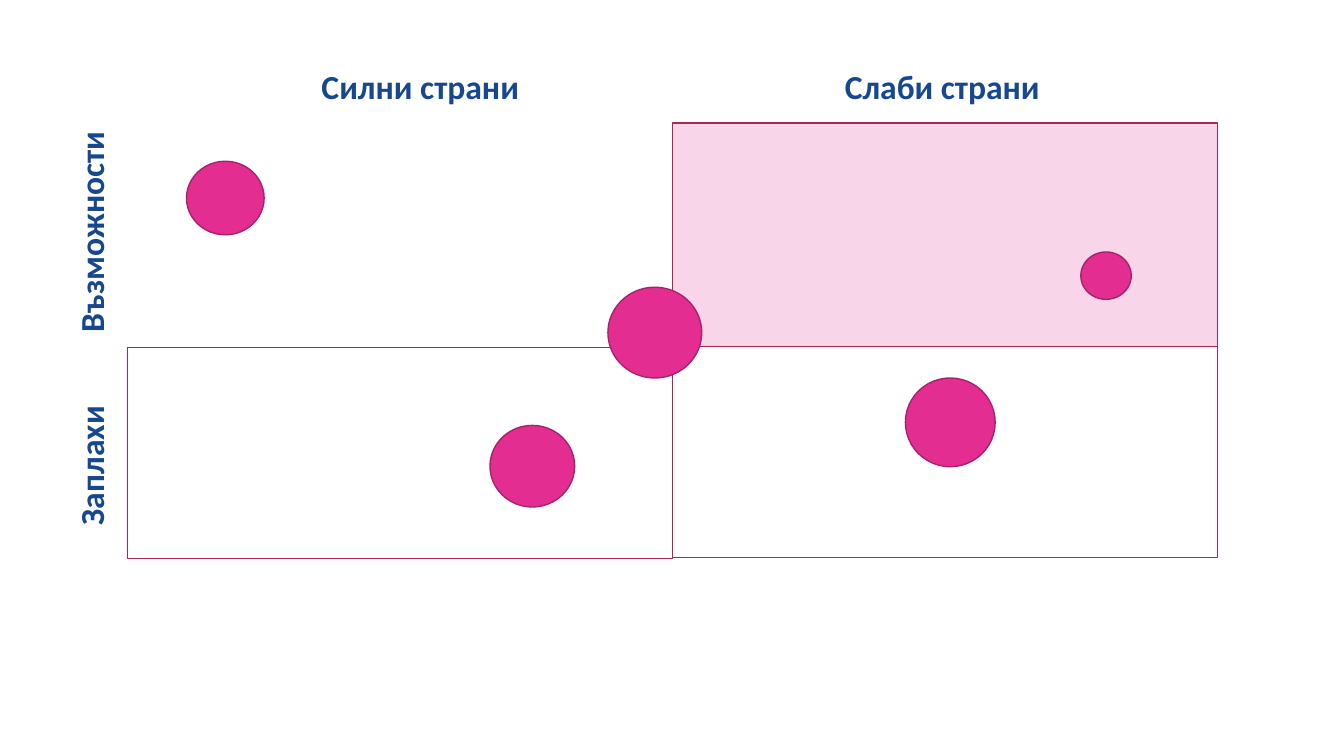
from pptx import Presentation
from pptx.dml.color import RGBColor
from pptx.enum.shapes import MSO_SHAPE
from pptx.enum.text import MSO_AUTO_SIZE, PP_ALIGN
from pptx.util import Emu, Pt

RECTANGLE = MSO_SHAPE.RECTANGLE
OVAL = MSO_SHAPE.OVAL
LEFT = PP_ALIGN.LEFT
CENTER = PP_ALIGN.CENTER
GROW = MSO_AUTO_SIZE.SHAPE_TO_FIT_TEXT

EMU_PER_PX = 9144
BLANK_LAYOUT = 6
COLORS = {
    "heading": "17478F",
    "border": "AD2851",
    "highlight": "F9D5E9",
    "bubble": "E32D91",
    "bubble_border": "A8216B",
}


def color(name):
    return RGBColor.from_string(COLORS[name])


def write_text(frame, text, size=24, bold=True, font="Calibri", fill="heading", align=LEFT):
    paragraph = frame.paragraphs[0]
    paragraph.alignment = align
    run = paragraph.add_run()
    run.text = text
    run.font.name = font
    run.font.size = Pt(size)
    run.font.bold = bold
    run.font.color.rgb = color(fill)


class MatrixSlide:
    def __init__(self, slide):
        self.slide = slide

    def box(self, *lengths):
        return [Emu(length * EMU_PER_PX) for length in lengths]

    def shape(self, kind, left, top, width, height, fill, line, weight):
        shape = self.slide.shapes.add_shape(kind, *self.box(left, top, width, height))
        shape.shadow.inherit = False
        if fill:
            shape.fill.solid()
            shape.fill.fore_color.rgb = color(fill)
        else:
            shape.fill.background()
        shape.line.color.rgb = color(line)
        shape.line.width = Pt(weight)

    def quadrant(self, left, top, width, height, fill=None):
        self.shape(RECTANGLE, left, top, width, height, fill, "border", 0.75)

    def bubble(self, left, top, width, height):
        self.shape(OVAL, left, top, width, height, "bubble", "bubble_border", 1)

    def heading(self, text, left, top, width, rotation=0, align=LEFT):
        shape = self.slide.shapes.add_textbox(*self.box(left, top, width, 50))
        shape.rotation = rotation
        shape.text_frame.word_wrap = True
        shape.text_frame.auto_size = GROW
        write_text(shape.text_frame, text, align=align)


def main():
    presentation = Presentation()
    presentation.slide_width = Emu(1333 * EMU_PER_PX)
    presentation.slide_height = Emu(750 * EMU_PER_PX)
    layout = presentation.slide_layouts[BLANK_LAYOUT]
    matrix = MatrixSlide(presentation.slides.add_slide(layout))

    matrix.quadrant(667, 122, 541, 222, fill="highlight")
    matrix.quadrant(126, 345, 541, 209)
    matrix.quadrant(667, 344, 541, 209)

    for text, left in (("Силни страни", 309), ("Слаби страни", 828)):
        matrix.heading(text, left, 60, 219)
    for text, top in (("Възможности", 205), ("Заплахи", 437)):
        matrix.heading(text, -30, top, 240, rotation=270, align=CENTER)

    bubbles = (
        (486, 422, 84, 81),
        (603, 285, 93, 90),
        (185, 160, 77, 73),
        (1072, 250, 50, 47),
        (898, 375, 89, 88),
    )
    for bubble in bubbles:
        matrix.bubble(*bubble)

    presentation.save("out.pptx")


if __name__ == "__main__":
    main()
